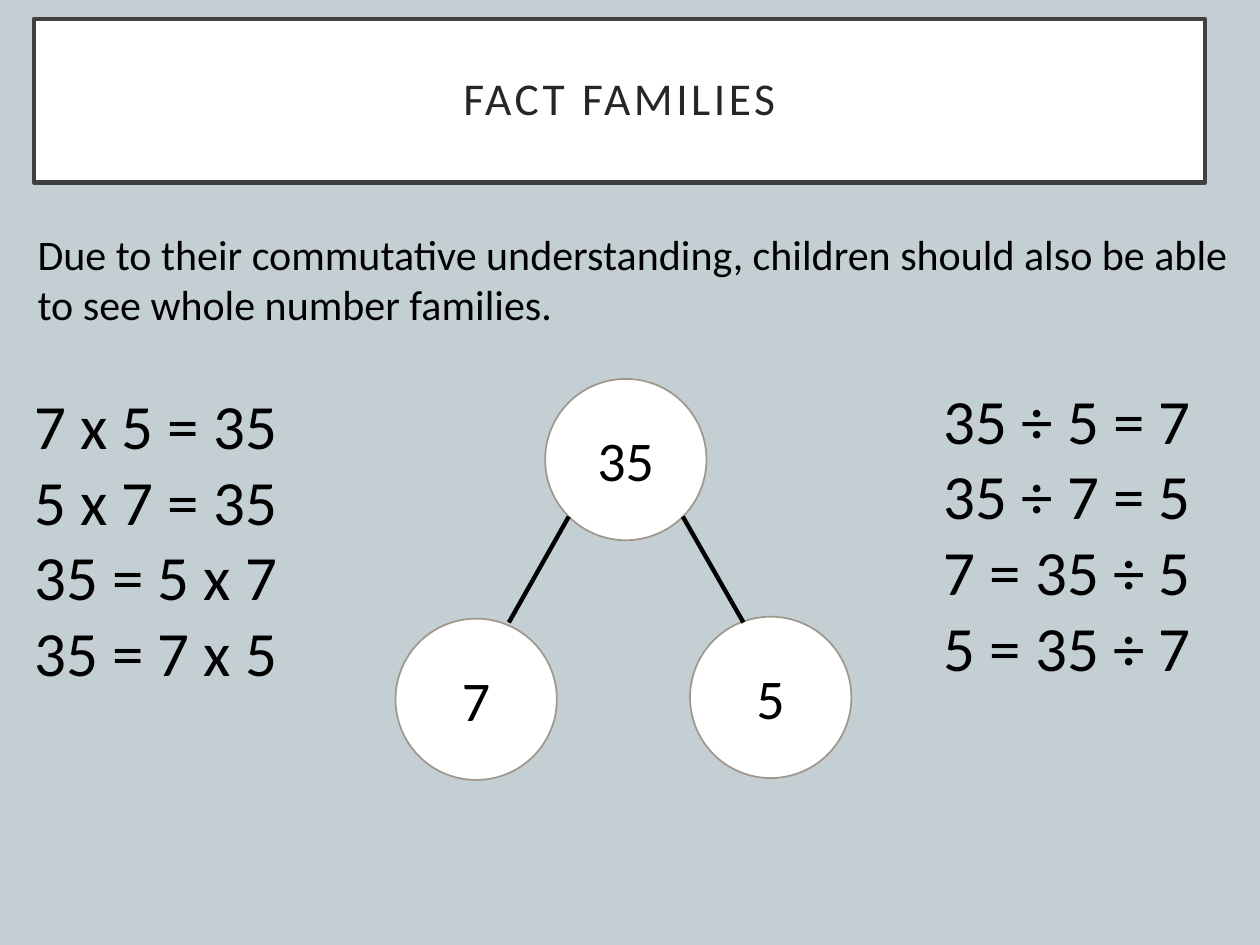
from pptx import Presentation
from pptx.dml.color import RGBColor
from pptx.enum.shapes import MSO_CONNECTOR, MSO_SHAPE
from pptx.enum.text import MSO_ANCHOR, PP_ALIGN
from pptx.oxml.ns import qn
from pptx.util import Pt
from lxml import etree

RECT, OVAL = MSO_SHAPE.RECTANGLE, MSO_SHAPE.OVAL
LINE = MSO_CONNECTOR.STRAIGHT
MIDDLE = MSO_ANCHOR.MIDDLE
LEFT, CENTER = PP_ALIGN.LEFT, PP_ALIGN.CENTER
COLORS = {
    "back": "C3CFD3", "white": "FFFFFF", "frame": "404040",
    "title": "262626", "ring": "A0988C", "black": "000000",
}


def color(name):
    return RGBColor.from_string(COLORS[name])


def write(shape, lines, size, ink="black", align=LEFT):
    frame = shape.text_frame
    frame.word_wrap = True
    for i, line in enumerate(lines):
        para = frame.add_paragraph() if i else frame.paragraphs[0]
        para.alignment = align
        run = para.add_run()
        run.text = line
        run.font.name = "Calibri"
        run.font.size = Pt(size)
        run.font.color.rgb = color(ink)
    return frame


deck = Presentation()
deck.slide_width, deck.slide_height = Pt(720), Pt(540)
slide = deck.slides.add_slide(deck.slide_layouts[6])
slide.background.fill.solid()
slide.background.fill.fore_color.rgb = color("back")
shapes = slide.shapes

title = shapes.add_shape(RECT, Pt(19.5), Pt(10.8), Pt(669), Pt(93.6))
title.shadow.inherit = False
title.fill.solid()
title.fill.fore_color.rgb = color("white")
title.line.color.rgb = color("frame")
title.line.width = Pt(2.5)
frame = write(title, ["FACT FAMILIES"], 26, "title", CENTER)
frame.vertical_anchor = MIDDLE
frame.margin_left = frame.margin_right = Pt(14.4)
frame.margin_top = frame.margin_bottom = Pt(14.4)
head = frame.paragraphs[0]
head.line_spacing = 0.9
head.runs[0].font._element.set("spc", "200")

intro = ["Due to their commutative understanding, children should also be able to see whole number families."]
times = ["7 x 5 = 35", "5 x 7 = 35", "35 = 5 x 7", "35 = 7 x 5"]
shares = ["35 ÷ 5 = 7", "35 ÷ 7 = 5", "7 = 35 ÷ 5", "5 = 35 ÷ 7"]
for lines, size, x, y, w, h in [
    (intro, 24, 14.4, 126.8, 705.6, 65.5),
    (times, 36, 12.5, 217.4, 199.4, 181.4),
    (shares, 36, 532, 214.3, 187, 181.4),
]:
    box = shapes.add_textbox(Pt(x), Pt(y), Pt(w), Pt(h))
    write(box, lines, size)

for label, x, y in [("35", 311.5, 216.5), ("7", 226, 353.5), ("5", 394.3, 352.4)]:
    ring = shapes.add_shape(OVAL, Pt(x), Pt(y), Pt(92.2), Pt(92.2))
    ring.shadow.inherit = False
    ring.fill.solid()
    ring.fill.fore_color.rgb = color("white")
    ring.line.color.rgb = color("ring")
    ring.line.width = Pt(1)
    write(ring, [label], 32, align=CENTER).vertical_anchor = MIDDLE

for top, end in [(390.2, 424.8), (325, 290.8)]:
    link = shapes.add_connector(LINE, Pt(top), Pt(295.2), Pt(end), Pt(355.7))
    link.line.color.rgb = color("black")
    link.line.width = Pt(2.5)
    etree.SubElement(link._element.spPr, qn("a:effectLst"))

deck.save("out.pptx")
